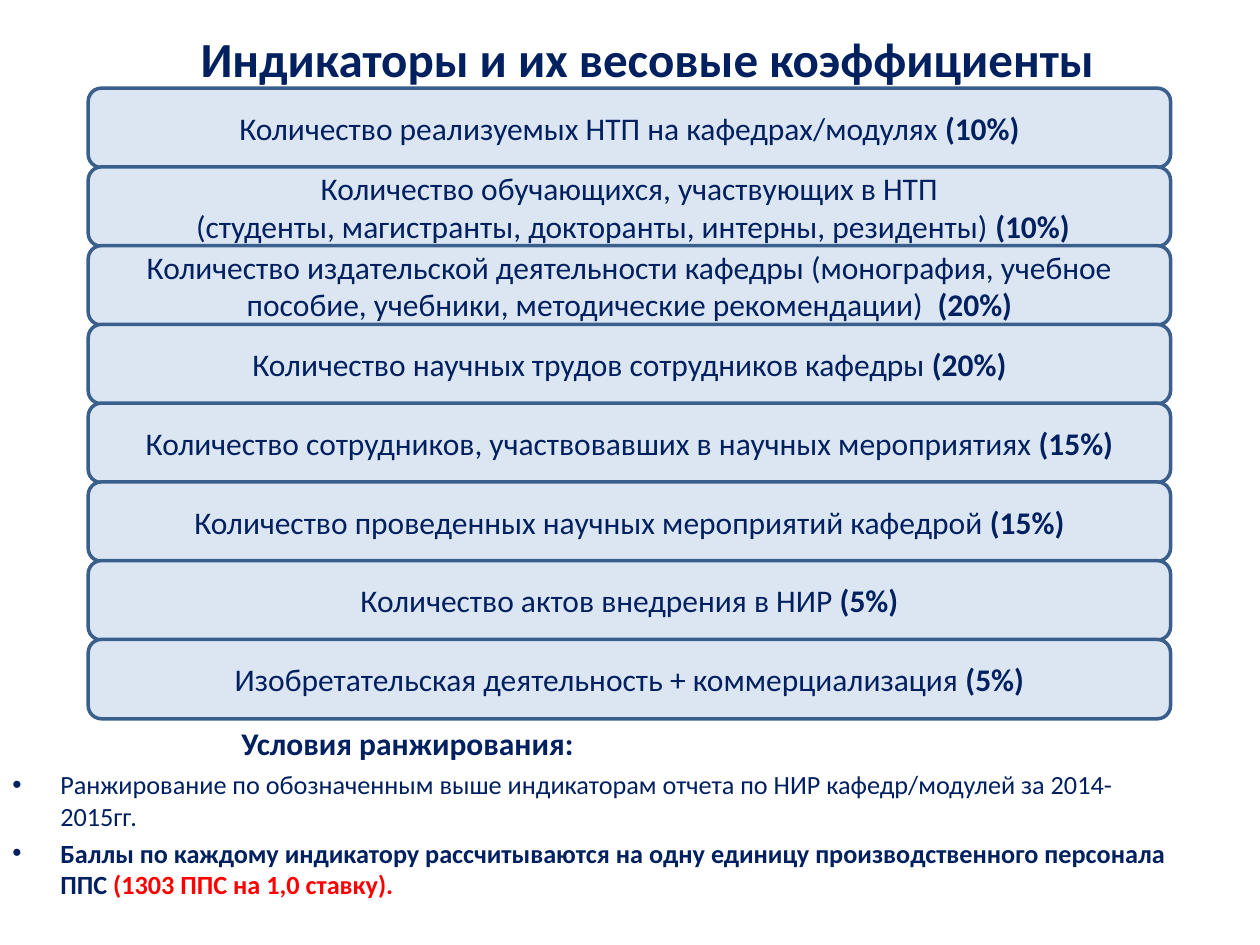
from dataclasses import dataclass

from lxml import etree
from pptx import Presentation
from pptx.dml.color import RGBColor
from pptx.enum import shapes, text
from pptx.oxml import ns
from pptx.util import Inches, Pt

NAVY = RGBColor(0x00, 0x20, 0x60)
RED = RGBColor(0xFF, 0x00, 0x00)
PALE_BLUE = RGBColor(0xDC, 0xE6, 0xF2)
STEEL_BLUE = RGBColor(0x3A, 0x5F, 0x8C)
FONT = "Calibri"

BAR_LEFT, BAR_TOP, BAR_WIDTH, BAR_HEIGHT = 0.7, 0.7, 8.59, 0.63
BAR_PITCH = 0.625
BULLET_INDENT = 0.38


@dataclass
class Run:
    words: str
    bold: bool = False
    color: RGBColor = NAVY


@dataclass
class Indicator:
    lines: list[str]
    weight: str


INDICATORS = [
    Indicator(["Количество реализуемых НТП на кафедрах/модулях "], "(10%)"),
    Indicator(["Количество обучающихся, участвующих в НТП",
               " (студенты, магистранты, докторанты, интерны, резиденты) "], "(10%)"),
    Indicator(["Количество издательской деятельности кафедры (монография, учебное "
               "пособие, учебники, методические рекомендации)  "], "(20%)"),
    Indicator(["Количество научных трудов сотрудников кафедры "], "(20%)"),
    Indicator(["Количество сотрудников, участвовавших в научных мероприятиях "], "(15%)"),
    Indicator(["Количество проведенных научных мероприятий кафедрой "], "(15%)"),
    Indicator(["Количество актов внедрения в НИР "], "(5%)"),
    Indicator(["Изобретательская деятельность + коммерциализация "], "(5%)"),
]

CONDITIONS = [
    [Run("Ранжирование по обозначенным выше индикаторам отчета по НИР "
         "кафедр/модулей за 2014-2015гг.")],
    [Run("Баллы по каждому индикатору рассчитываются на одну единицу "
         "производственного персонала  ППС ", bold=True),
     Run("(1303 ППС на 1,0 ставку).", bold=True, color=RED)],
]


def write(frame, paragraphs: list[list[Run]], size: int, align=text.PP_ALIGN.CENTER) -> None:
    for index, runs in enumerate(paragraphs):
        paragraph = frame.add_paragraph() if index else frame.paragraphs[0]
        paragraph.alignment = align
        for part in runs:
            run = paragraph.add_run()
            run.text = part.words
            run.font.name = FONT
            run.font.size = Pt(size)
            run.font.bold = part.bold
            run.font.color.rgb = part.color


def add_frame(slide, left: float, top: float, width: float, height: float, wrap: bool = True):
    box = slide.shapes.add_textbox(Inches(left), Inches(top), Inches(width), Inches(height))
    box.text_frame.word_wrap = wrap
    return box.text_frame


def add_title(slide) -> None:
    frame = add_frame(slide, 0.5, 0.3, 9.27, 0.79)
    frame.vertical_anchor = text.MSO_ANCHOR.MIDDLE
    frame.margin_bottom = Inches(0.52)  # lifts the title above the first bar
    write(frame, [[Run("Индикаторы и их весовые коэффициенты", bold=True)]], 28)


def add_indicator(slide, indicator: Indicator, row: int) -> None:
    bar = slide.shapes.add_shape(
        shapes.MSO_SHAPE.ROUNDED_RECTANGLE, Inches(BAR_LEFT),
        Inches(BAR_TOP + row * BAR_PITCH), Inches(BAR_WIDTH), Inches(BAR_HEIGHT))
    bar.shadow.inherit = False
    bar.fill.solid()
    bar.fill.fore_color.rgb = PALE_BLUE
    bar.line.color.rgb = STEEL_BLUE
    bar.line.width = Pt(2)
    bar.text_frame.word_wrap = True
    bar.text_frame.vertical_anchor = text.MSO_ANCHOR.MIDDLE
    paragraphs = [[Run(line)] for line in indicator.lines]
    paragraphs[-1].append(Run(indicator.weight, bold=True))
    write(bar.text_frame, paragraphs, 18)


def add_bullet(paragraph) -> None:
    properties = paragraph._p.get_or_add_pPr()
    properties.set("marL", str(Inches(BULLET_INDENT)))
    properties.set("indent", str(-Inches(BULLET_INDENT)))
    etree.SubElement(properties, ns.qn("a:buFont")).set("typeface", "Arial")
    etree.SubElement(properties, ns.qn("a:buChar")).set("char", "•")


def add_conditions(slide) -> None:
    frame = add_frame(slide, 0, 5.7, 9.45, 1.88)
    frame.margin_top = Inches(0.4)  # leaves room for the heading
    write(frame, CONDITIONS, 15, text.PP_ALIGN.LEFT)
    for paragraph in frame.paragraphs:
        add_bullet(paragraph)
    frame.paragraphs[-1].space_before = Pt(3)

    heading = add_frame(slide, 1.8, 5.7, 2.87, 0.4, wrap=False)
    write(heading, [[Run("Условия ранжирования:", bold=True)]], 18)


def main() -> None:
    deck = Presentation()
    deck.slide_width, deck.slide_height = Inches(10), Inches(7.5)
    slide = deck.slides.add_slide(deck.slide_layouts[6])
    add_title(slide)
    for row, indicator in enumerate(INDICATORS):
        add_indicator(slide, indicator, row)
    add_conditions(slide)
    deck.save("out.pptx")


if __name__ == "__main__":
    main()
